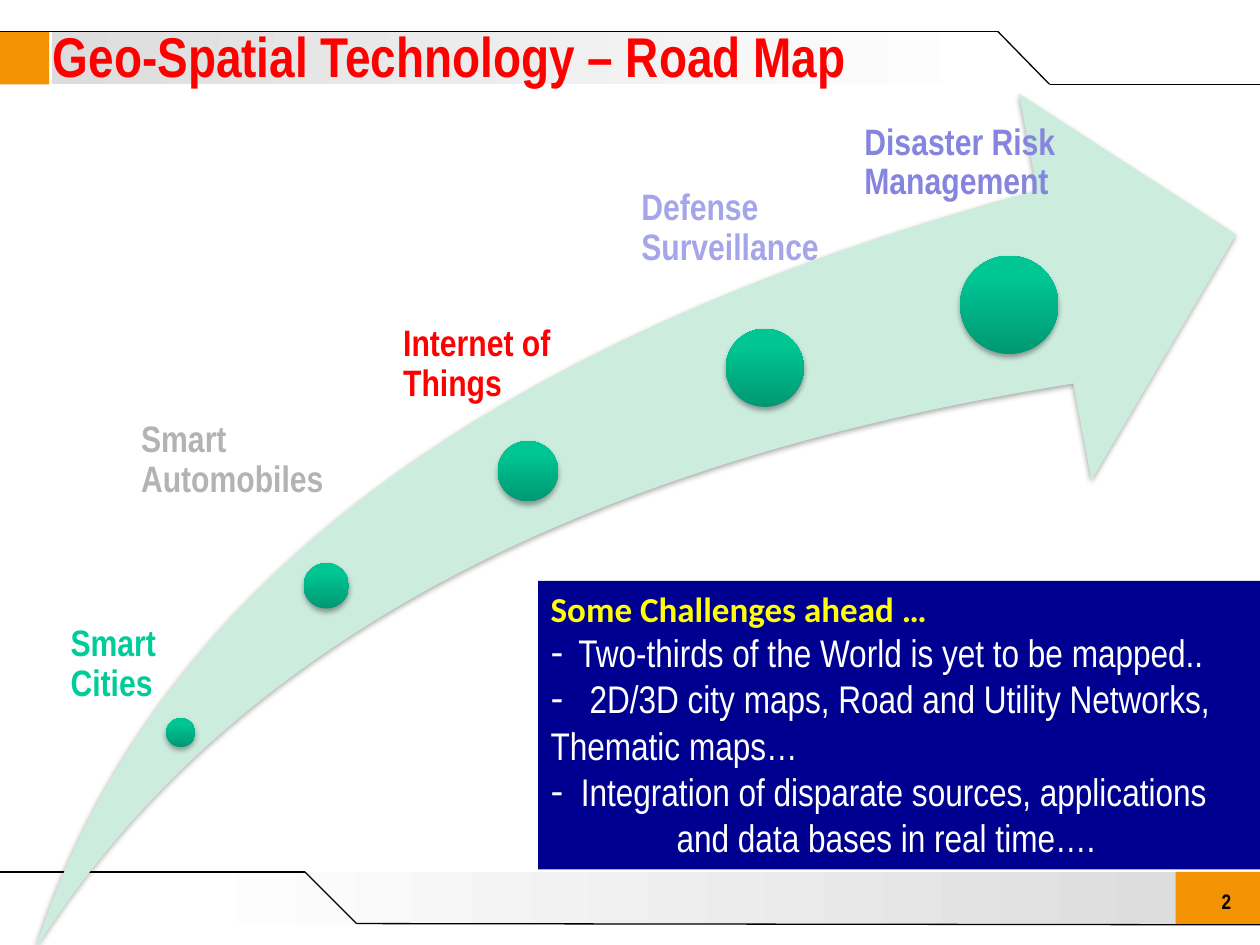
from typing import NamedTuple

from lxml.etree import SubElement
from pptx import Presentation
from pptx.dml.color import RGBColor
from pptx.enum.shapes import MSO_CONNECTOR, MSO_SHAPE
from pptx.enum.text import MSO_ANCHOR, MSO_AUTO_SIZE, PP_ALIGN
from pptx.oxml import parse_xml
from pptx.oxml.ns import nsdecls, qn
from pptx.util import Inches, Pt

HUES = {
    "black": "000000", "white": "FFFFFF", "gray": "DDDDDD", "orange": "F39203",
    "mint": "CCECDE", "deep": "009872", "mid": "00C694", "light": "00C795",
    "green": "00CC99", "silver": "B3B3B3", "red": "FF0000", "lilac": "A5A5E9",
    "violet": "8585E0", "navy": "000090", "yellow": "FFFF00",
}
FACE = "Arial Narrow"


class Stop(NamedTuple):
    pos: int
    hue: str


class Band(NamedTuple):
    left: float
    top: float
    width: float
    stops: list[Stop]


class Line(NamedTuple):
    x1: float
    y1: float
    x2: float
    y2: float


class Stage(NamedTuple):
    text: str
    hue: str
    left: float
    top: float
    width: float
    height: float
    inset: float
    dot_x: float
    dot_y: float
    size: float


class Item(NamedTuple):
    text: str
    tabs: list[float]


BANDS = [
    Band(1.42, 6.92, 7.92, [Stop(0, "white"), Stop(100, "gray")]),
    Band(9.33, 6.92, 0.67, [Stop(0, "orange")]),
    Band(0.41, 0.25, 7.51, [Stop(0, "gray"), Stop(100, "white")]),
    Band(0, 0.25, 0.39, [Stop(0, "orange")]),
]
LINES = [
    Line(8.33, 0.67, 10, 0.67), Line(0, 0.25, 7.92, 0.25),
    Line(7.92, 0.25, 8.33, 0.67), Line(0, 6.92, 2.42, 6.92),
    Line(2.83, 7.33, 10, 7.34), Line(2.42, 6.92, 2.83, 7.33),
]
STAGES = [
    Stage("Smart Cities", "green", 0.44, 4.96, 1.3, 1.48, 0.12, 1.32, 5.7, 0.23),
    Stage("Smart Automobiles", "silver", 0.93, 3.34, 1.65, 2.6, 0.19, 2.41, 4.47, 0.36),
    Stage("Internet of Things", "red", 2.95, 2.58, 1.91, 3.48, 0.25, 3.95, 3.5, 0.48),
    Stage("Defense Surveillance", "lilac", 4.76, 1.5, 1.98, 4.15, 0.33, 5.76, 2.61, 0.62),
    Stage("Disaster Risk Management", "violet", 6.44, 0.98, 1.98, 3.38, 0.42, 7.62, 2.03, 0.78),
]
GLOSS = [Stop(0, "deep"), Stop(80, "mid"), Stop(100, "light")]
ITEMS = [
    Item("\tTwo-thirds of the World is yet to be mapped..", [0.22]),
    Item("\t2D/3D city maps, Road and Utility Networks, Thematic maps…", [0.31]),
    Item("\tIntegration of disparate sources, applications\v\t\tand data bases in real time….",
         [0.24, 1]),
]


def color(hue: str) -> RGBColor:
    return RGBColor.from_string(HUES[hue])


def place(shape, left: float, top: float, width: float, height: float) -> None:
    shape.left, shape.top = Inches(left), Inches(top)
    shape.width, shape.height = Inches(width), Inches(height)


def paint(shape, stops: list[Stop], angle: int = 0) -> None:
    if len(stops) == 1:
        shape.fill.solid()
        shape.fill.fore_color.rgb = color(stops[0].hue)
        return
    marks = "".join(
        f'<a:gs pos="{s.pos * 1000}"><a:srgbClr val="{HUES[s.hue]}"/></a:gs>' for s in stops)
    fill = parse_xml(
        f'<a:gradFill {nsdecls("a")} rotWithShape="1"><a:gsLst>{marks}</a:gsLst>'
        f'<a:lin ang="{angle * 60000}" scaled="0"/></a:gradFill>')
    shape._element.spPr.find(qn("a:prstGeom")).addnext(fill)


def draw(shapes, kind, box: tuple, stops: list[Stop], angle: int = 0, shade: bool = False):
    shape = shapes.add_shape(kind, *map(Inches, box))
    shape.shadow.inherit = False
    shape.line.fill.background()
    paint(shape, stops, angle)
    if shade:
        shape._element.spPr.find(qn("a:effectLst")).append(parse_xml(
            f'<a:outerShdw {nsdecls("a")} blurRad="{Pt(3.1)}" dist="{Pt(1.8)}" dir="5400000" '
            f'rotWithShape="0"><a:srgbClr val="{HUES["black"]}"><a:alpha val="35000"/>'
            '</a:srgbClr></a:outerShdw>'))
    return shape


def rule(shapes, line: Line) -> None:
    wire = shapes.add_connector(MSO_CONNECTOR.STRAIGHT, *map(Inches, line))
    wire.line.color.rgb = color("black")
    wire.line.width = Pt(0.75)
    SubElement(wire._element.spPr, qn("a:effectLst"))


def write(para, text: str, size: int, hue: str, bold: bool = True, face: str = FACE) -> None:
    for n, part in enumerate(text.split("\v")):
        if n:
            para.add_line_break()
        run = para.add_run()
        run.text = part
        run.font.name, run.font.size, run.font.bold = face, Pt(size), bold
        run.font.color.rgb = color(hue)


def mark(shapes, stage: Stage) -> None:
    draw(shapes, MSO_SHAPE.OVAL, (stage.dot_x, stage.dot_y, stage.size, stage.size),
         GLOSS, 270, True)
    box = shapes.add_textbox(*map(Inches, (stage.left, stage.top, stage.width, stage.height)))
    frame = box.text_frame
    frame.word_wrap = True
    frame.margin_left = Inches(stage.inset)
    frame.margin_top = frame.margin_right = frame.margin_bottom = 0
    para = frame.paragraphs[0]
    para.line_spacing = 0.9
    write(para, stage.text, 21, stage.hue)


def style(para, item: Item | None = None) -> None:
    props = para._p.get_or_add_pPr()
    props.set("marL", "0")
    props.set("indent", "0")
    if item:
        SubElement(props, qn("a:buChar")).set("char", "-")
        tabs = SubElement(props, qn("a:tabLst"))
        for pos in item.tabs:
            tab = SubElement(tabs, qn("a:tab"))
            tab.set("pos", str(Inches(pos)))
            tab.set("algn", "l")
    else:
        SubElement(props, qn("a:buNone"))
    para.space_before = Pt(0)
    para.alignment = PP_ALIGN.LEFT


def main() -> None:
    deck = Presentation()
    deck.slide_width, deck.slide_height = Inches(10), Inches(7.5)
    slide = deck.slides.add_slide(deck.slide_layouts[1])
    shapes = slide.shapes
    title, body = shapes.title, slide.placeholders[1]

    for band in BANDS:
        draw(shapes, MSO_SHAPE.RECTANGLE, (band.left, band.top, band.width, 0.42), band.stops)
    for line in LINES:
        rule(shapes, line)
    page = shapes.add_textbox(*map(Inches, (9.42, 7, 0.45, 0.3)))
    page.text_frame.word_wrap = True
    para = page.text_frame.paragraphs[0]
    para.alignment = PP_ALIGN.RIGHT
    write(para, "2", 12, "black")

    arrow = draw(shapes, MSO_SHAPE.SWOOSH_ARROW, (0.04, 0.98, 9.92, 6.2),
                 [Stop(0, "mint")], shade=True)
    arrow.rotation = 355.8
    arrow.adjustments[0] = arrow.adjustments[1] = 0.25
    for stage in STAGES:
        mark(shapes, stage)

    place(title, 0.32, 0.12, 8.5, 0.64)
    place(body, 4.27, 4.61, 5.73, 2.29)
    for holder in (title, body):
        shapes._spTree.append(holder._element)
        frame = holder.text_frame
        frame.word_wrap = True
        frame.auto_size = MSO_AUTO_SIZE.NONE
        frame.vertical_anchor = MSO_ANCHOR.TOP
    head = title.text_frame.paragraphs[0]
    head.alignment = PP_ALIGN.LEFT
    write(head, "Geo-Spatial Technology – Road Map", 32, "red")

    paint(body, [Stop(0, "navy")])
    lead = body.text_frame.paragraphs[0]
    style(lead)
    write(lead, "Some Challenges ahead …", 20, "yellow", face="Calibri")
    for item in ITEMS:
        para = body.text_frame.add_paragraph()
        style(para, item)
        write(para, item.text, 22, "white", bold=False)

    deck.save("out.pptx")


if __name__ == "__main__":
    main()
